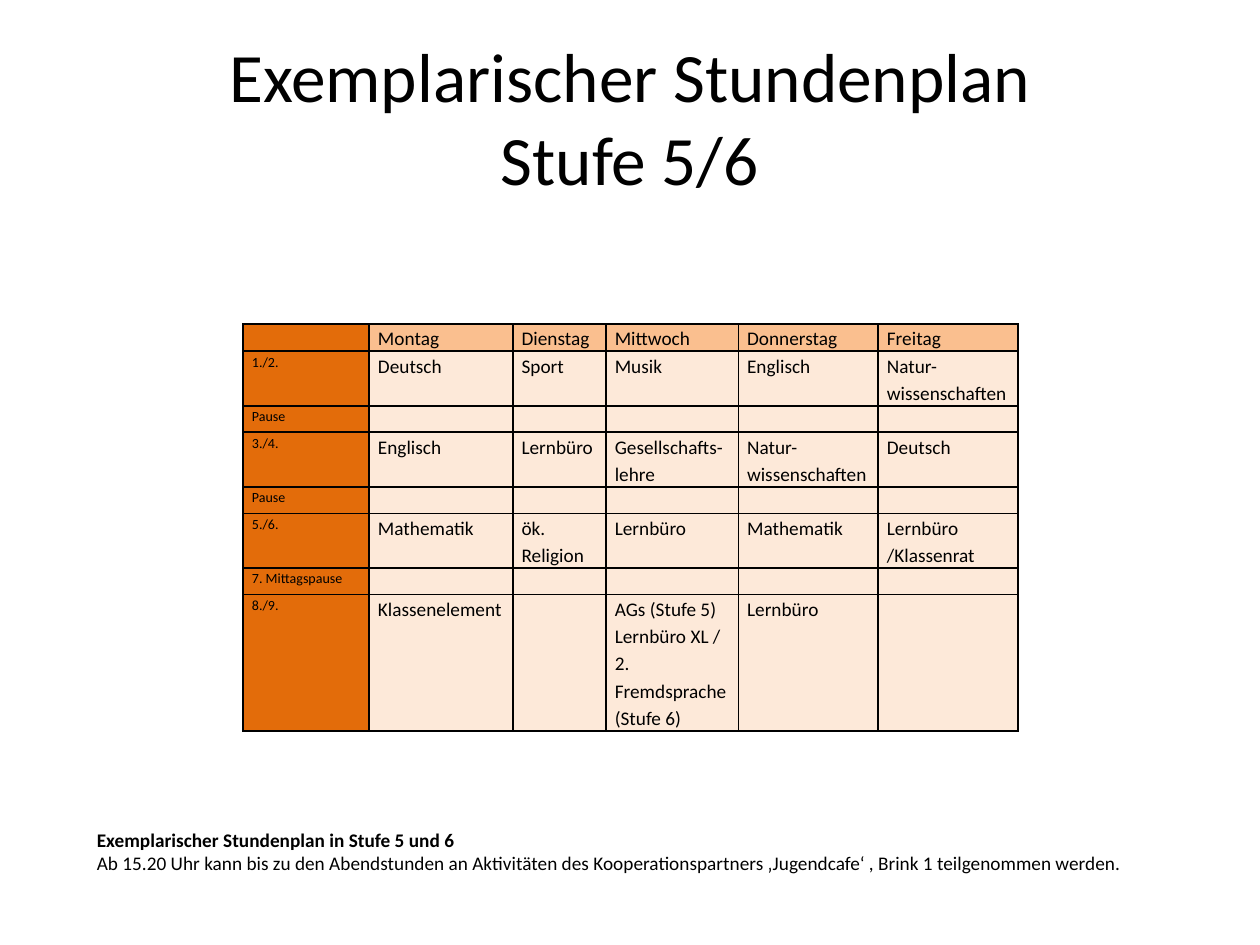
"""Builds the sample timetable slide for years 5 and 6."""
from lxml.etree import SubElement
from pptx import Presentation
from pptx.dml.color import RGBColor
from pptx.enum.text import MSO_ANCHOR as Anchor, MSO_AUTO_SIZE as AutoSize, PP_ALIGN as Align
from pptx.oxml.ns import qn
from pptx.util import Inches, Pt

TITLE = "Exemplarischer Stundenplan\vStufe 5/6"
DAYS = ["", "Montag", "Dienstag", "Mittwoch", "Donnerstag", "Freitag"]
BREAK = [""] * 5
LESSONS = [
    ("1./2.", 2, ["Deutsch", "Sport", "Musik", "Englisch", "Natur-wissenschaften"]),
    ("Pause", 1, BREAK),
    ("3./4.", 2, ["Englisch", "Lernbüro", "Gesellschafts-lehre", "Natur-wissenschaften", "Deutsch"]),
    ("Pause", 1, BREAK),
    ("5./6.", 2, ["Mathematik", "ök. Religion", "Lernbüro", "Mathematik", "Lernbüro\n/Klassenrat"]),
    ("7. Mittagspause", 1, BREAK),
    ("8./9.", 5, ["Klassenelement", "", "AGs (Stufe 5)\nLernbüro XL /\n2. Fremdsprache (Stufe 6)",
                  "Lernbüro", ""]),
]
NOTES = [
    ("Exemplarischer Stundenplan in Stufe 5 und 6", True),
    ("Ab 15.20 Uhr kann bis zu den Abendstunden an Aktivitäten des Kooperationspartners "
     "‚Jugendcafe‘ , Brink 1 teilgenommen werden.", False),
]
COLUMN_WIDTHS = [1, 1.14, 0.74, 1.05, 1.11, 1.11]
LINE_HEIGHT = 0.21
FONT = "Calibri"
BLACK = RGBColor(0x00, 0x00, 0x00)
ORANGE = RGBColor(0xE3, 0x6C, 0x0A)
APRICOT = RGBColor(0xFA, 0xBF, 0x8F)
CREAM = RGBColor(0xFD, 0xE9, 0xD9)
CELL_FORMAT = {"margin_left": Inches(0.07), "margin_right": Inches(0.07),
               "margin_top": 0, "margin_bottom": 0, "vertical_anchor": Anchor.TOP}


def apply(target, values):
    for name, value in values.items():
        setattr(target, name, value)


def style(span, size, bold=False):
    apply(span.font, {"name": FONT, "size": Pt(size), "bold": bold})
    span.font.color.rgb = BLACK


def add_borders(cell):
    properties = cell._tc.get_or_add_tcPr()
    for side in ("lnL", "lnR", "lnT", "lnB"):
        line = SubElement(properties, qn(f"a:{side}"), w=str(Pt(1)))
        SubElement(SubElement(line, qn("a:solidFill")), qn("a:srgbClr"), val=str(BLACK))


def fill_cell(cell, text, color, size):
    apply(cell, CELL_FORMAT)
    add_borders(cell)
    cell.fill.solid()
    cell.fill.fore_color.rgb = color
    cell.text_frame.text = text
    for para in cell.text_frame.paragraphs:
        para.line_spacing = 1.15
        for span in para.runs:
            style(span, size)
        if not para.runs:
            SubElement(para._p, qn("a:endParaRPr"), sz=str(size * 100))


def add_title(page):
    box = page.shapes.title
    apply(box, {"left": Inches(0.5), "top": Inches(0.3), "width": Inches(9), "height": Inches(1.25)})
    frame = box.text_frame
    frame.text = TITLE
    apply(frame, {"auto_size": AutoSize.NONE, "vertical_anchor": Anchor.MIDDLE})
    para = frame.paragraphs[0]
    para.alignment = Align.CENTER
    for span in para.runs:
        style(span, 39.6)


def add_timetable(page):
    rows = [(1, DAYS)] + [(lines, [hour] + subjects) for hour, lines, subjects in LESSONS]
    height = LINE_HEIGHT * sum(lines for lines, _ in rows)
    table = page.shapes.add_table(len(rows), len(DAYS), Inches(1.93), Inches(2.57),
                                  Inches(sum(COLUMN_WIDTHS)), Inches(height)).table
    apply(table, {"first_row": False, "horz_banding": False})
    for column, width in zip(table.columns, COLUMN_WIDTHS):
        column.width = Inches(width)
    for r, (lines, texts) in enumerate(rows):
        table.rows[r].height = Inches(lines * LINE_HEIGHT)
        for c, text in enumerate(texts):
            color = ORANGE if c == 0 else APRICOT if r == 0 else CREAM
            fill_cell(table.cell(r, c), text, color, 8 if c == 0 else 11)


def add_notes(page):
    box = page.shapes.add_textbox(Inches(0.67), Inches(6.51), Inches(10), Inches(0.5))
    frame = box.text_frame
    apply(frame, {"word_wrap": False, "auto_size": AutoSize.SHAPE_TO_FIT_TEXT,
                  "vertical_anchor": Anchor.MIDDLE})
    frame.text = "\n".join(text for text, _ in NOTES)
    for para, (_, bold) in zip(frame.paragraphs, NOTES):
        para.alignment = Align.LEFT
        style(para.runs[0], 11, bold)


def main():
    deck = Presentation()
    apply(deck, {"slide_width": Inches(10), "slide_height": Inches(7.5)})
    page = deck.slides.add_slide(deck.slide_layouts[5])
    add_title(page)
    add_timetable(page)
    add_notes(page)
    deck.save("out.pptx")


if __name__ == "__main__":
    main()
